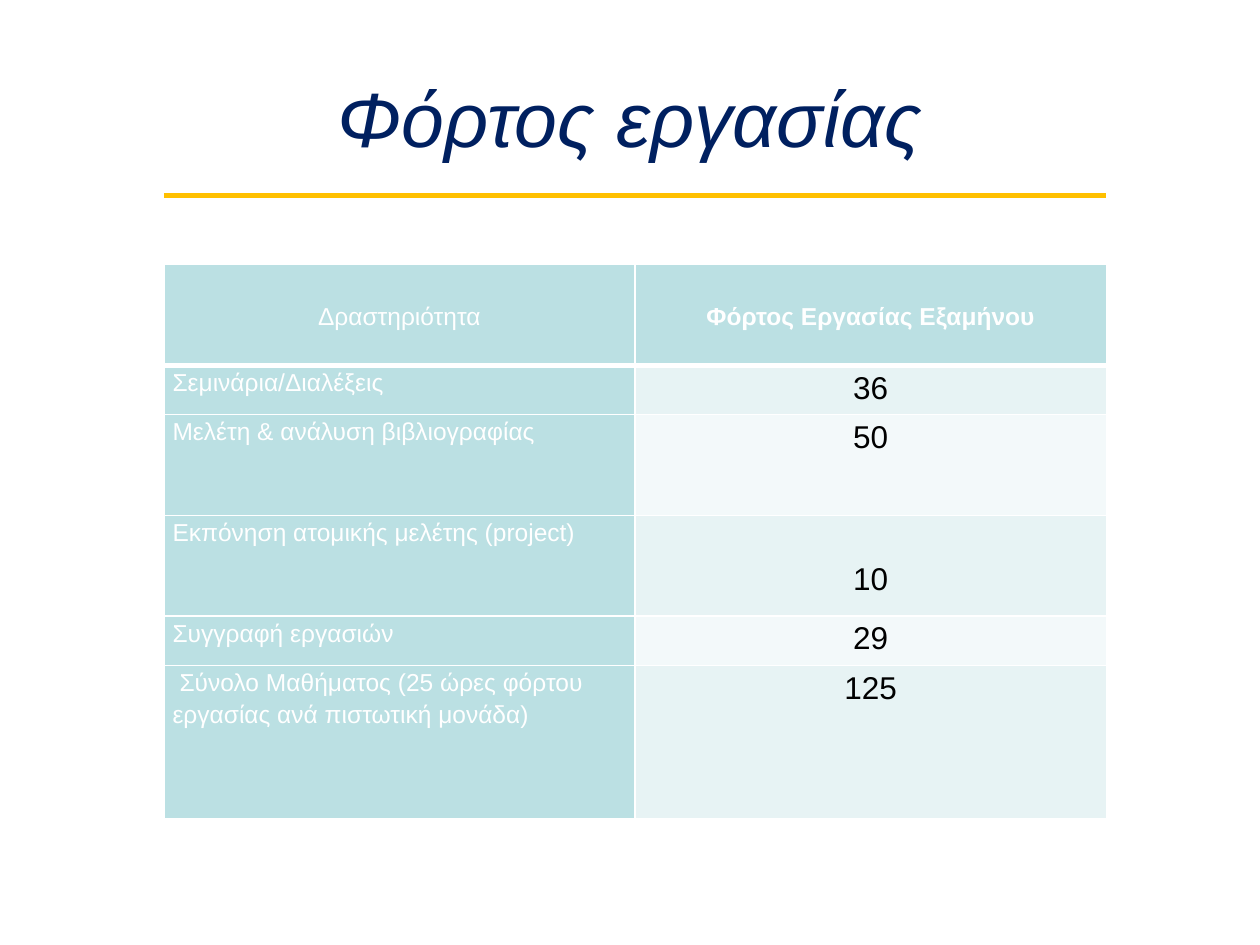
from lxml import etree
from pptx import Presentation
from pptx.dml.color import RGBColor
from pptx.enum.shapes import MSO_CONNECTOR
from pptx.enum.text import MSO_ANCHOR, PP_ALIGN
from pptx.oxml.ns import qn
from pptx.util import Pt

CENTER, LEFT = PP_ALIGN.CENTER, PP_ALIGN.LEFT
MIDDLE, TOP = MSO_ANCHOR.MIDDLE, MSO_ANCHOR.TOP
STRAIGHT = MSO_CONNECTOR.STRAIGHT

FONT = "Arial"
NAVY, GOLD, WHITE, BLACK = "002060", "FFC000", "FFFFFF", "000000"
TEAL = "BBE0E3"
BANDS = ["E7F3F4", "F3F9FA"]

TITLE = "Φόρτος εργασίας"
HEADER = ("Δραστηριότητα", "Φόρτος Εργασίας Εξαμήνου")
HEADER_HEIGHT = 57.6
ACTIVITIES = [
    {"name": "Σεμινάρια/Διαλέξεις", "hours": "36", "height": 28.1},
    {"name": "Μελέτη & ανάλυση βιβλιογραφίας", "hours": "50", "height": 57.6},
    {"name": "Εκπόνηση ατομικής μελέτης (project)", "hours": "10", "height": 57.6, "drop": 23.6},
    {"name": "Συγγραφή εργασιών", "hours": "29", "height": 28.1},
    {"name": "Σύνολο Μαθήματος (25 ώρες φόρτου εργασίας ανά πιστωτική μονάδα)",
     "hours": "125", "height": 87.8, "indent": 4},
]
TABLE_LEFT, TABLE_TOP, TABLE_WIDTH = 93.6, 151.2, 538.6
RULE_TOP = 111.6


def color(value):
    return RGBColor.from_string(value)


def write(para, text, size, ink, align, bold=False, italic=False):
    para.alignment = align
    span = para.add_run()
    span.text = text
    font = span.font
    font.name, font.size, font.bold, font.italic = FONT, Pt(size), bold, italic
    font.color.rgb = color(ink)


def add_borders(cell, bottom):
    properties = cell._tc.get_or_add_tcPr()
    for side, width in (("L", 1), ("R", 1), ("T", 1), ("B", bottom)):
        line = etree.SubElement(properties, qn("a:ln" + side), w=str(Pt(width)))
        fill = etree.SubElement(line, qn("a:solidFill"))
        etree.SubElement(fill, qn("a:srgbClr"), val=WHITE)


def fill_cell(cell, text, size, ink, back, align, anchor=TOP, bold=False, bottom=1, drop=0, indent=0):
    cell.margin_left = cell.margin_right = Pt(5)
    cell.margin_top, cell.margin_bottom = Pt(drop), Pt(0)
    cell.vertical_anchor = anchor
    add_borders(cell, bottom)
    cell.fill.solid()
    cell.fill.fore_color.rgb = color(back)
    para = cell.text_frame.paragraphs[0]
    para.line_spacing = 1.15
    if indent:
        para._p.get_or_add_pPr().set("indent", str(Pt(indent)))
    write(para, text, size, ink, align, bold)


def add_title(page):
    box = page.shapes.add_textbox(Pt(36), Pt(21.6), Pt(648), Pt(90))
    frame = box.text_frame
    frame.word_wrap = True
    frame.vertical_anchor = MIDDLE
    write(frame.paragraphs[0], TITLE, 44, NAVY, CENTER, italic=True)


def add_workload_table(page):
    heights = [HEADER_HEIGHT] + [activity["height"] for activity in ACTIVITIES]
    table = page.shapes.add_table(len(heights), len(HEADER), Pt(TABLE_LEFT), Pt(TABLE_TOP),
                                  Pt(TABLE_WIDTH), Pt(sum(heights))).table
    for row, height in zip(table.rows, heights):
        row.height = Pt(height)
    for column, label in enumerate(HEADER):
        table.columns[column].width = Pt(TABLE_WIDTH / len(HEADER))
        fill_cell(table.cell(0, column), label, 14, WHITE, TEAL, CENTER, MIDDLE,
                  bold=column == 1, bottom=3)
    for index, activity in enumerate(ACTIVITIES):
        fill_cell(table.cell(index + 1, 0), activity["name"], 14, WHITE, TEAL, LEFT,
                  indent=activity.get("indent", 0))
        fill_cell(table.cell(index + 1, 1), activity["hours"], 18, BLACK,
                  BANDS[index % len(BANDS)], CENTER, drop=activity.get("drop", 0))


def add_rule(page):
    rule = page.shapes.add_connector(STRAIGHT, Pt(TABLE_LEFT), Pt(RULE_TOP),
                                     Pt(TABLE_LEFT + TABLE_WIDTH), Pt(RULE_TOP))
    rule.line.color.rgb = color(GOLD)
    rule.line.width = Pt(3)
    etree.SubElement(rule._element.spPr, qn("a:effectLst"))


def main():
    deck = Presentation()
    deck.slide_width, deck.slide_height = Pt(720), Pt(540)
    page = deck.slides.add_slide(deck.slide_layouts[6])
    add_title(page)
    add_workload_table(page)
    add_rule(page)
    deck.save("out.pptx")


if __name__ == "__main__":
    main()
